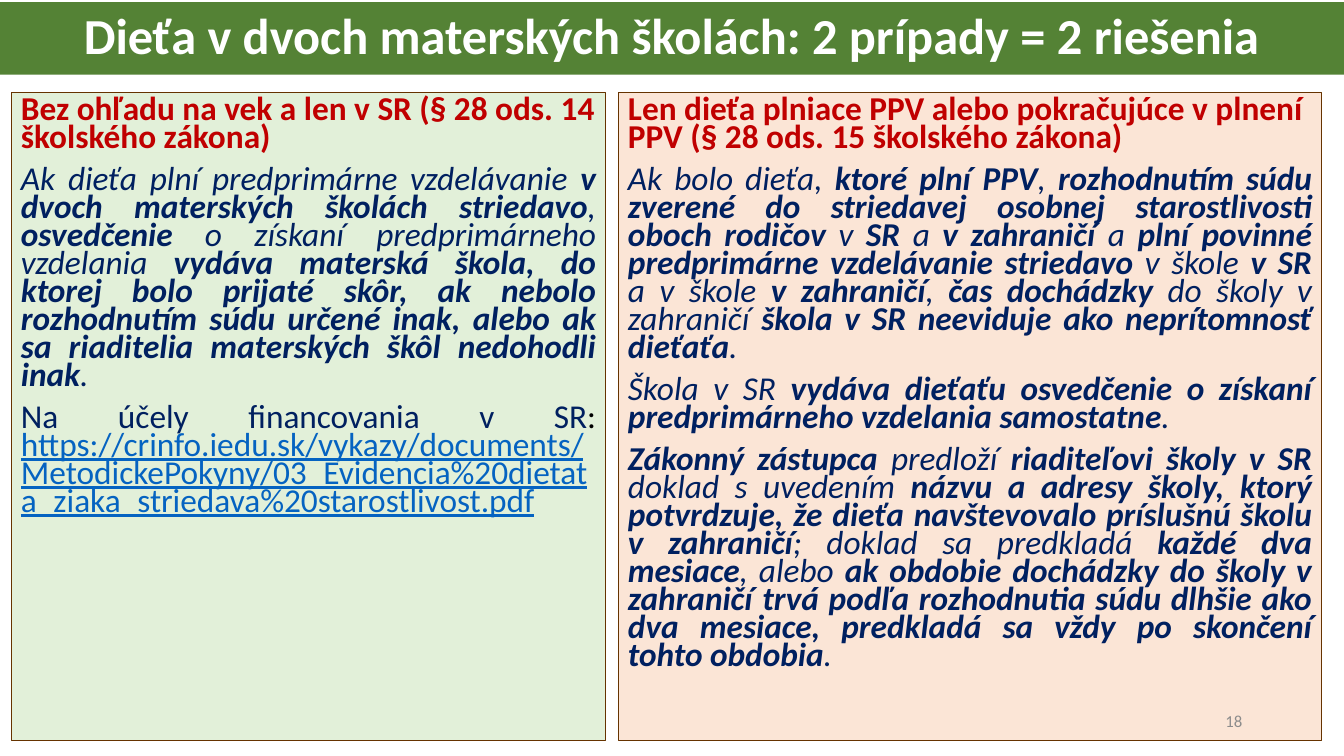
"""Build the slide on a child attending two kindergartens."""
from pptx import Presentation
from pptx.dml.color import RGBColor
from pptx.enum.shapes import MSO_SHAPE
from pptx.enum.text import MSO_ANCHOR, MSO_AUTO_SIZE, PP_ALIGN
from pptx.util import Inches, Pt

RECTANGLE = MSO_SHAPE.RECTANGLE
TOP, MIDDLE = MSO_ANCHOR.TOP, MSO_ANCHOR.MIDDLE
NO_AUTOFIT = MSO_AUTO_SIZE.NONE
LEFT, CENTER, RIGHT, JUSTIFY = PP_ALIGN.LEFT, PP_ALIGN.CENTER, PP_ALIGN.RIGHT, PP_ALIGN.JUSTIFY

WHITE = RGBColor(0xFF, 0xFF, 0xFF)
BLACK = RGBColor(0x00, 0x00, 0x00)
GRAY = RGBColor(0x8C, 0x8C, 0x8C)
BANNER_GREEN = RGBColor(0x54, 0x82, 0x35)
PALE_GREEN = RGBColor(0xE2, 0xF0, 0xD9)
PALE_ORANGE = RGBColor(0xFB, 0xE5, 0xD6)
BROWN = RGBColor(0x66, 0x33, 0x00)
RED = RGBColor(0xC0, 0x00, 0x00)
NAVY = RGBColor(0x00, 0x20, 0x60)
LINK_BLUE = RGBColor(0x05, 0x63, 0xC1)

FONT = "Calibri"
BOLD_MARK = "**"
SLIDE_WIDTH, SLIDE_HEIGHT = 13.33, 7.5
PANEL_TOP, PANEL_HEIGHT = 0.92, 6.43
PANEL_TEXT_SIZE = 23.8

TITLE = "Dieťa v dvoch materských školách: 2 prípady = 2 riešenia"
PAGE_NUMBER = "18"

PANELS = [
    {
        "left": 0.11, "width": 5.9, "fill": PALE_GREEN,
        "heading": "Bez ohľadu na vek a len v SR (§ 28 ods. 14 školského zákona)",
        "rules": [
            "Ak dieťa plní predprimárne vzdelávanie **v dvoch materských školách striedavo**, "
            "**osvedčenie** o získaní predprimárneho vzdelania **vydáva materská škola, do "
            "ktorej bolo prijaté skôr, ak nebolo rozhodnutím súdu určené inak, alebo ak sa "
            "riaditelia materských škôl nedohodli inak**.",
        ],
        "source": [
            ("Na účely financovania v SR", NAVY, False),
            (": ", BLACK, False),
            ("https://crinfo.iedu.sk/vykazy/documents/MetodickePokyny/"
             "03_Evidencia%20dietata_ziaka_striedava%20starostlivost.pdf", LINK_BLUE, True),
        ],
    },
    {
        "left": 6.13, "width": 6.98, "fill": PALE_ORANGE,
        "heading": "Len dieťa plniace PPV alebo pokračujúce v plnení PPV "
                   "(§ 28 ods. 15 školského zákona)",
        "rules": [
            "Ak bolo dieťa, **ktoré plní PPV**, **rozhodnutím súdu zverené do striedavej "
            "osobnej starostlivosti oboch rodičov **v **SR **a **v zahraničí **a **plní "
            "povinné predprimárne vzdelávanie striedavo** v škole **v SR **a v škole "
            "**v zahraničí**, **čas dochádzky **do školy v zahraničí **škola v SR neeviduje "
            "ako neprítomnosť dieťaťa**.",
            "Škola v SR **vydáva dieťaťu osvedčenie o získaní predprimárneho vzdelania "
            "samostatne**.",
            "**Zákonný zástupca **predloží **riaditeľovi školy v SR** doklad s uvedením "
            "**názvu a adresy školy, ktorý potvrdzuje, že dieťa navštevovalo príslušnú školu "
            "v zahraničí**; doklad sa predkladá **každé dva mesiace**, alebo **ak obdobie "
            "dochádzky do školy v zahraničí trvá podľa rozhodnutia súdu dlhšie ako dva "
            "mesiace, predkladá sa vždy po skončení tohto obdobia**.",
        ],
        "source": [],
    },
]


def write(paragraph, text, size=PANEL_TEXT_SIZE, color=NAVY, bold=False, italic=False,
          underline=False, align=LEFT, spacing=0.7, before=0):
    """Append text to a paragraph, switching bold at each mark."""
    paragraph.alignment = align
    paragraph.line_spacing = spacing
    paragraph.space_before = Pt(before)
    for index, part in enumerate(text.split(BOLD_MARK)):
        if part:
            run = paragraph.add_run()
            run.text = part
            font = run.font
            font.name, font.size, font.color.rgb = FONT, Pt(size), color
            font.bold = bold or index % 2 == 1
            font.italic, font.underline = italic, underline


def prepare_frame(shape, anchor):
    """Set wrapping and anchoring, and return the text frame."""
    frame = shape.text_frame
    frame.word_wrap = True
    frame.auto_size = NO_AUTOFIT
    frame.vertical_anchor = anchor
    return frame


def add_title(slide):
    """Turn the title placeholder into the green banner."""
    banner = slide.shapes.title
    banner.left, banner.top = Inches(0), Inches(0.02)
    banner.width, banner.height = Inches(SLIDE_WIDTH), Inches(0.72)
    banner.fill.solid()
    banner.fill.fore_color.rgb = BANNER_GREEN
    frame = prepare_frame(banner, MIDDLE)
    write(frame.paragraphs[0], TITLE, size=36, color=WHITE, bold=True, align=CENTER, spacing=0.9)


def add_panel(slide, panel):
    """Draw one case with its heading, rules and source."""
    box = slide.shapes.add_shape(RECTANGLE, Inches(panel["left"]), Inches(PANEL_TOP),
                                 Inches(panel["width"]), Inches(PANEL_HEIGHT))
    box.shadow.inherit = False
    box.fill.solid()
    box.fill.fore_color.rgb = panel["fill"]
    box.line.color.rgb = BROWN
    box.line.width = Pt(0.75)
    frame = prepare_frame(box, TOP)
    write(frame.paragraphs[0], panel["heading"], color=RED, bold=True)
    for rule in panel["rules"]:
        write(frame.add_paragraph(), rule, italic=True, align=JUSTIFY, before=10)
    if panel["source"]:
        source = frame.add_paragraph()
        for text, color, underline in panel["source"]:
            write(source, text, color=color, underline=underline, align=JUSTIFY, before=10)


def add_page_number(slide):
    """Place the page number at the lower right."""
    number = slide.shapes.add_textbox(Inches(9.42), Inches(6.95), Inches(3), Inches(0.4))
    frame = prepare_frame(number, MIDDLE)
    write(frame.paragraphs[0], PAGE_NUMBER, size=12, color=GRAY, align=RIGHT, spacing=1.0)


def main():
    """Assemble and save the slide."""
    deck = Presentation()
    deck.slide_width, deck.slide_height = Inches(SLIDE_WIDTH), Inches(SLIDE_HEIGHT)
    slide = deck.slides.add_slide(deck.slide_layouts[5])
    add_title(slide)
    for panel in PANELS:
        add_panel(slide, panel)
    add_page_number(slide)
    deck.save("out.pptx")


if __name__ == "__main__":
    main()
